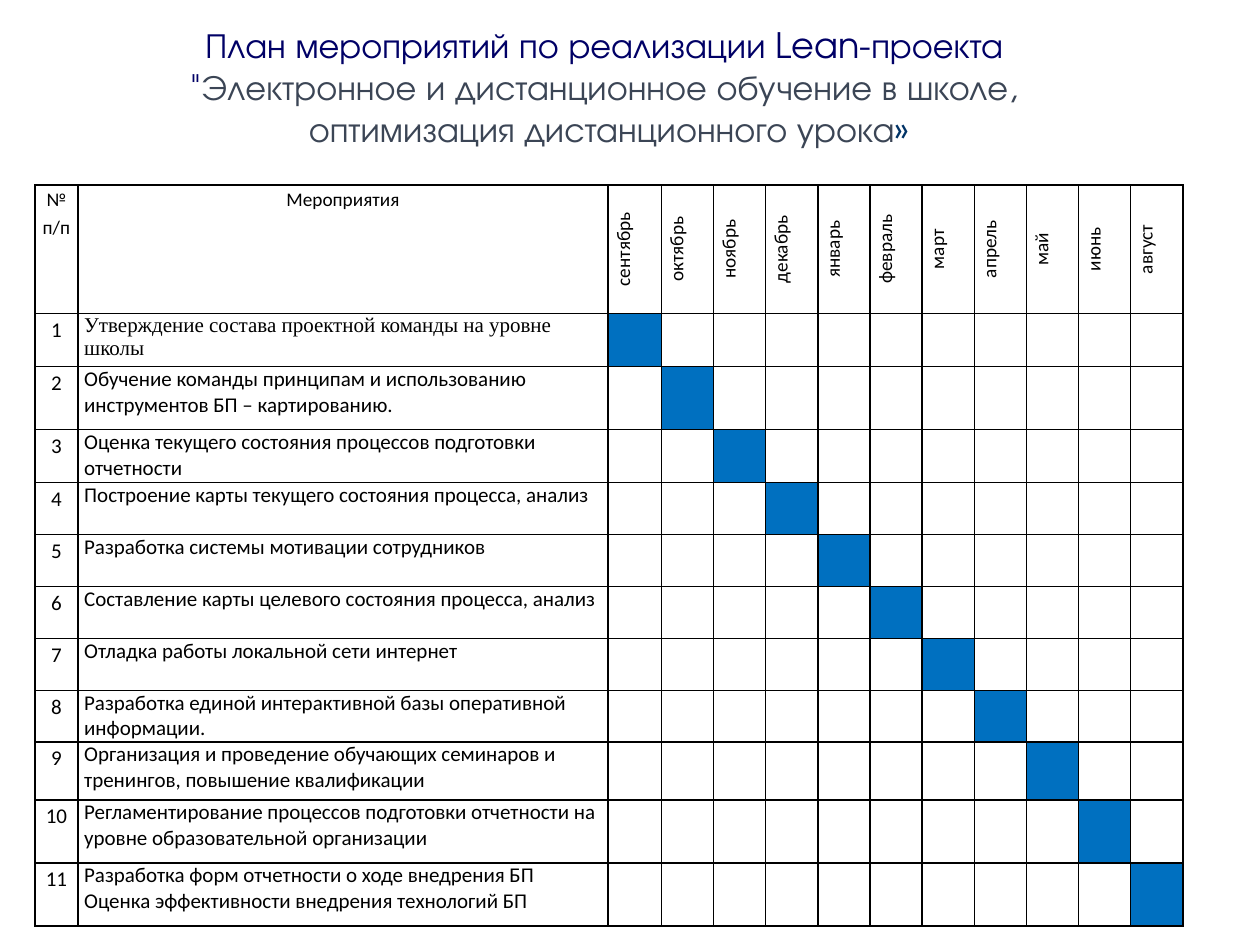
from lxml.etree import SubElement
from pptx import Presentation
from pptx.dml.color import RGBColor
from pptx.enum.text import MSO_ANCHOR as Anchor, MSO_AUTO_SIZE as AutoSize, PP_ALIGN as Align
from pptx.oxml.ns import qn
from pptx.util import Pt

COLORS = {"navy": "000066", "slate": "3B4555", "blue": "003366",
          "black": "000000", "white": "FFFFFF", "done": "0070C0"}

# Content: title lines as (text, colour) runs
TITLE = [
    [("План мероприятий по реализации Lean-проекта ", "navy")],
    [('"', "navy"), ("Электронное и дистанционное обучение в школе, ", "slate")],
    [("оптимизация дистанционного урока", "slate"), ("»", "blue")],
]
MONTHS = ["сентябрь", "октябрь", "ноябрь", "декабрь", "январь", "февраль",
          "март", "апрель", "май", "июнь", "август"]
# One activity per month; each is a list of paragraphs
ACTIVITIES = [
    ["Утверждение состава проектной команды на уровне школы"],
    ["Обучение команды принципам и использованию инструментов БП – картированию."],
    ["Оценка текущего состояния процессов подготовки отчетности"],
    ["Построение карты текущего состояния процесса, анализ"],
    ["Разработка системы мотивации сотрудников"],
    ["Составление карты целевого состояния процесса, анализ"],
    ["Отладка работы локальной сети интернет"],
    ["Разработка единой интерактивной базы оперативной информации."],
    ["Организация и проведение обучающих семинаров и тренингов, повышение квалификации"],
    ["Регламентирование процессов подготовки отчетности на уровне образовательной организации"],
    ["Разработка форм отчетности о ходе внедрения БП",
     "Оценка эффективности внедрения технологий БП"],
]
COLUMN_WIDTHS = [24.5, 303, 30.5] + [29.8] * (len(MONTHS) - 1)
ROW_HEIGHTS = [73.7, 30.3, 36, 30.3] + [29.7] * 4 + [29.5, 33.1, 36, 36]


def rgb(name):
    return RGBColor.from_string(COLORS[name])


def style_cell(cell, fill):
    cell.margin_left = cell.margin_right = Pt(3.6)
    cell.margin_top = cell.margin_bottom = 0
    props = cell._tc.get_or_add_tcPr()
    for side in ("a:lnL", "a:lnR", "a:lnT", "a:lnB"):
        border = SubElement(props, qn(side), w=str(Pt(1)))
        paint = SubElement(border, qn("a:solidFill"))
        SubElement(paint, qn("a:srgbClr"), val=COLORS["black"])
    cell.fill.solid()
    cell.fill.fore_color.rgb = rgb(fill)


def write_cell(cell, paragraphs, size=12, align=Align.CENTER, spacing=1.15, font="Calibri"):
    frame = cell.text_frame
    for i, text in enumerate(paragraphs):
        paragraph = frame.add_paragraph() if i else frame.paragraphs[0]
        paragraph.alignment = align
        paragraph.line_spacing = spacing
        run = paragraph.add_run()
        run.text = text
        run.font.size = Pt(size)
        run.font.name = font
        run.font.color.rgb = rgb("black")


prs = Presentation()
prs.slide_width, prs.slide_height = Pt(720), Pt(540)
slide = prs.slides.add_slide(prs.slide_layouts[5])

# Title
title = slide.shapes.title
title.left, title.top, title.width, title.height = Pt(100.8), Pt(9.4), Pt(494.6), Pt(79.9)
heading = title.text_frame
heading.word_wrap = False
heading.auto_size = AutoSize.SHAPE_TO_FIT_TEXT
heading.vertical_anchor = Anchor.MIDDLE
heading_line = heading.paragraphs[0]
heading_line.alignment = Align.CENTER
for i, line in enumerate(TITLE):
    if i:
        heading_line.add_line_break()
    for text, color in line:
        run = heading_line.add_run()
        run.text = text
        run.font.size = Pt(20)
        run.font.name = "TeX Gyre Adventor"
        run.font.color.rgb = rgb(color)

# Schedule grid: each activity takes the month on the diagonal
plan = slide.shapes.add_table(len(ROW_HEIGHTS), len(COLUMN_WIDTHS), Pt(20), Pt(105.6),
                              Pt(sum(COLUMN_WIDTHS)), Pt(sum(ROW_HEIGHTS))).table
plan.first_row = plan.horz_banding = False
for column, width in zip(plan.columns, COLUMN_WIDTHS):
    column.width = Pt(width)
for row, height in zip(plan.rows, ROW_HEIGHTS):
    row.height = Pt(height)
for r in range(len(ROW_HEIGHTS)):
    for c in range(len(COLUMN_WIDTHS)):
        cell = plan.cell(r, c)
        style_cell(cell, "done" if r and c == r + 1 else "white")
        cell.text_frame.paragraphs[0].font.size = Pt(12)

# Header row
for c, label in enumerate(["№ п/п", "Мероприятия"] + MONTHS):
    cell = plan.cell(0, c)
    write_cell(cell, [label], size=11)
    if c > 1:
        cell._tc.get_or_add_tcPr().set("vert", "vert270")

# Activities
for number, activity in enumerate(ACTIVITIES, 1):
    write_cell(plan.cell(number, 0), [str(number)])
    write_cell(plan.cell(number, 1), activity, align=Align.LEFT, spacing=1.0,
               font="Times New Roman" if number == 1 else "Calibri")

prs.save("out.pptx")
